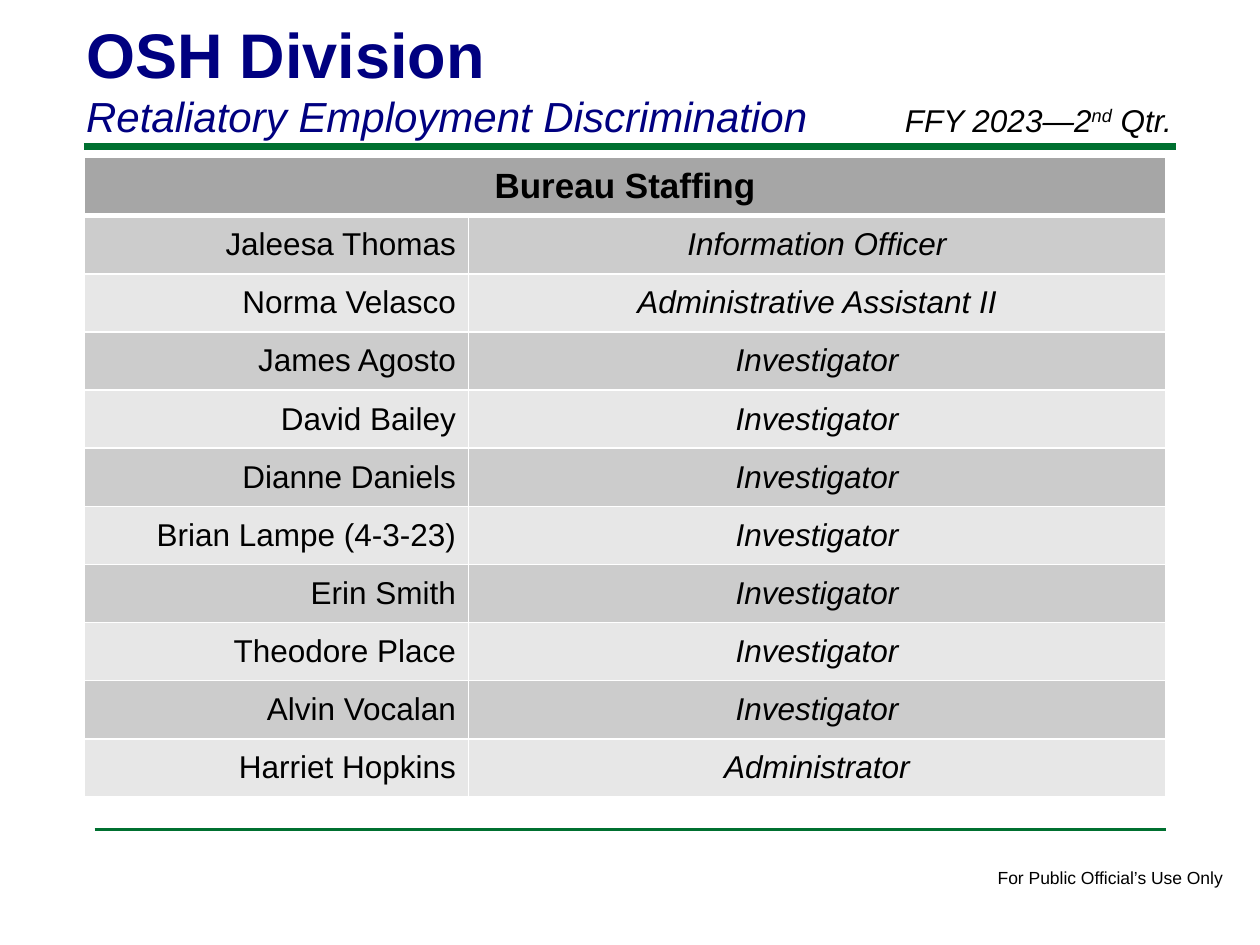
"""Build the bureau staffing slide."""
from lxml.etree import SubElement
from pptx import Presentation
from pptx.dml.color import RGBColor
from pptx.enum.shapes import MSO_CONNECTOR
from pptx.enum.text import MSO_ANCHOR, MSO_AUTO_SIZE, PP_ALIGN
from pptx.oxml.ns import qn
from pptx.util import Pt


def tint(code):
    return RGBColor.from_string(code)


def write(para, text, size=18, color="000000", bold=False, italic=False,
          align=PP_ALIGN.LEFT, base=0):
    para.alignment = align
    run = para.add_run()
    run.text = text
    font = run.font
    font.name, font.size = "Arial", Pt(size)
    font.bold, font.italic = bold, italic
    font.color.rgb = tint(color)
    if base:
        run._r.get_or_add_rPr().set("baseline", str(base * 1000))


deck = Presentation()
deck.slide_width, deck.slide_height = Pt(720), Pt(540)
slide = deck.slides.add_slide(deck.slide_layouts[5])
shapes = slide.shapes

for left, right, top, width in [(48, 672, 84, 4), (54, 666, 474, 2)]:
    rule = shapes.add_connector(MSO_CONNECTOR.STRAIGHT,
                                Pt(left), Pt(top), Pt(right), Pt(top))
    rule.line.color.rgb = tint("007030")
    rule.line.width = Pt(width)
    SubElement(rule._element.spPr, qn("a:effectLst"))

note = shapes.add_textbox(Pt(563), Pt(492), Pt(145), Pt(19.4)).text_frame
note.word_wrap = False
write(note.paragraphs[0], "For Public Official’s Use Only", size=10)

staff = [
    ("Jaleesa Thomas", "Information Officer"),
    ("Norma Velasco", "Administrative Assistant II"),
    ("James Agosto", "Investigator"),
    ("David Bailey", "Investigator"),
    ("Dianne Daniels", "Investigator"),
    ("Brian Lampe (4-3-23)", "Investigator"),
    ("Erin Smith", "Investigator"),
    ("Theodore Place", "Investigator"),
    ("Alvin Vocalan", "Investigator"),
    ("Harriet Hopkins", "Administrator"),
]
count = len(staff) + 1
table = shapes.add_table(count, 2, Pt(48.4), Pt(90), Pt(617.6), Pt(365.75)).table
table.columns[0].width, table.columns[1].width = Pt(219.4), Pt(398.2)

for index, row in enumerate(table.rows):
    row.height = Pt(33.25)
    fill = "A6A6A6" if index == 0 else ("E7E7E7", "CCCCCC")[index % 2]
    for cell in row.cells:
        cell.vertical_anchor = MSO_ANCHOR.MIDDLE
        props = cell._tc.get_or_add_tcPr()
        for side in "LRTB":
            thick = (side, index) in [("B", 0), ("T", 1)]
            edge = SubElement(props, qn(f"a:ln{side}"), w=str(Pt(3 if thick else 1)))
            paint = SubElement(edge, qn("a:solidFill"))
            SubElement(paint, qn("a:srgbClr"), val="FFFFFF")
        cell.fill.solid()
        cell.fill.fore_color.rgb = tint(fill)

head = table.cell(0, 0)
head.merge(table.cell(0, 1))
write(head.text_frame.paragraphs[0], "Bureau Staffing", size=20, bold=True,
      align=PP_ALIGN.CENTER)
for index, (name, role) in enumerate(staff, 1):
    write(table.cell(index, 0).text_frame.paragraphs[0], name, align=PP_ALIGN.RIGHT)
    write(table.cell(index, 1).text_frame.paragraphs[0], role, italic=True,
          align=PP_ALIGN.CENTER)

title = shapes.title
title.left, title.top, title.width, title.height = Pt(42), Pt(4.3), Pt(594), Pt(80)
frame = title.text_frame
frame.auto_size = MSO_AUTO_SIZE.NONE
frame.vertical_anchor = MSO_ANCHOR.BOTTOM
write(frame.paragraphs[0], "OSH Division", size=36, color="000080", bold=True)
write(frame.add_paragraph(), "Retaliatory Employment Discrimination", size=24,
      color="000080", italic=True)

term = shapes.add_textbox(Pt(510), Pt(54), Pt(180), Pt(29)).text_frame
term.word_wrap = True
for text, base in [("FFY 2023—2", 0), ("nd", 30), (" Qtr.", 0)]:
    write(term.paragraphs[0], text, italic=True, base=base)

deck.save("out.pptx")
